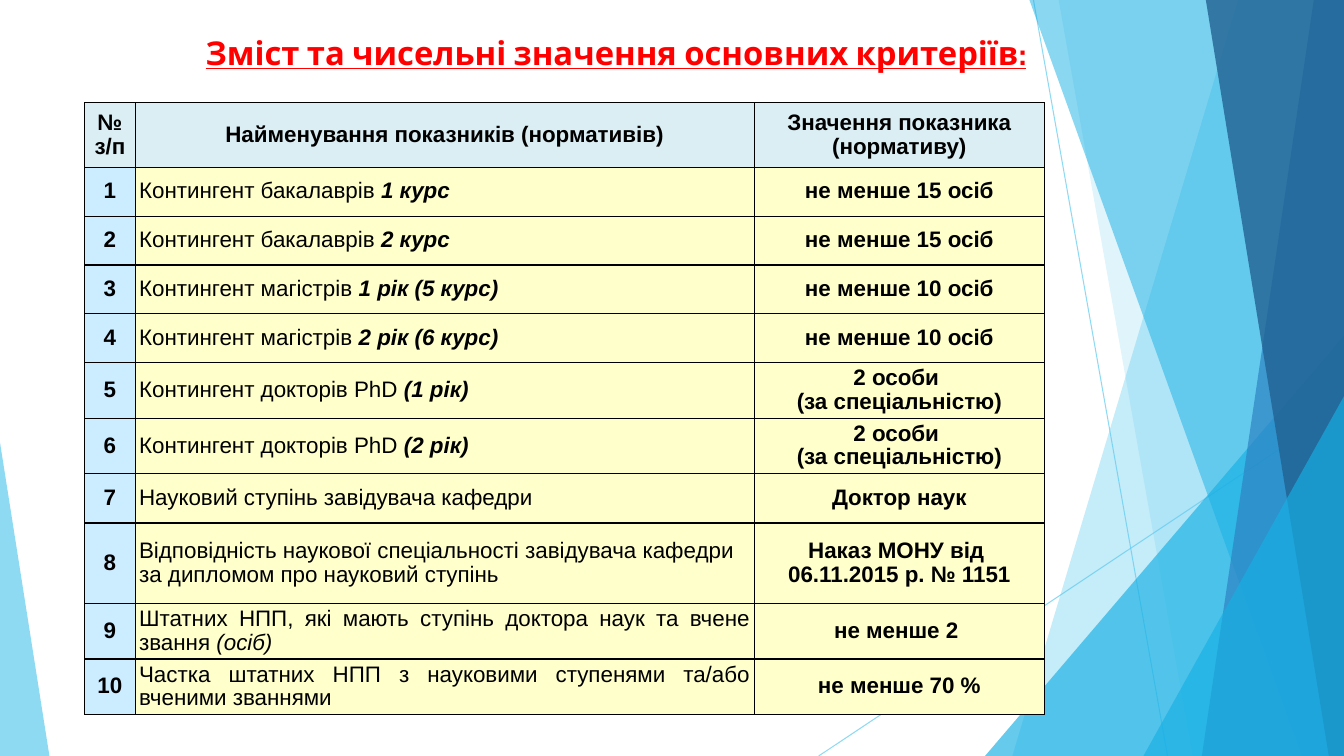
"""Builds the slide with the table of main criteria and their numeric values."""
import pptx
import pptx.dml.color
import pptx.enum.shapes
import pptx.enum.text
import pptx.oxml
import pptx.oxml.ns
import pptx.util

COLUMNS, ROWS = 1333, 750
UNIT = pptx.util.Inches(0.01)
NAMESPACE = pptx.oxml.ns.nsdecls("a")
ALIGN = pptx.enum.text.PP_ALIGN
MIDDLE = pptx.enum.text.MSO_ANCHOR.MIDDLE


def paint(fill, color, opacity=100):
    """Gives a fill a solid colour with an opacity in per cent."""
    fill.solid()
    fill.fore_color.rgb = pptx.dml.color.RGBColor.from_string(color)
    if opacity < 100:
        alpha = pptx.oxml.parse_xml(f'<a:alpha {NAMESPACE} val="{opacity * 1000}"/>')
        fill._xPr.find(".//" + pptx.oxml.ns.qn("a:srgbClr")).append(alpha)


presentation = pptx.Presentation()
presentation.slide_width = COLUMNS * UNIT
presentation.slide_height = ROWS * UNIT
slide = presentation.slides.add_slide(presentation.slide_layouts[5])

for start_x, start_y, end_x, end_y in [(1025, 0, 1158, ROWS), (COLUMNS, 403, 812, ROWS)]:
    connector = slide.shapes.add_connector(
        pptx.enum.shapes.MSO_CONNECTOR.STRAIGHT,
        start_x * UNIT, start_y * UNIT, end_x * UNIT, end_y * UNIT)
    connector.line.width = pptx.util.Pt(0.75)
    paint(connector.line.fill, "5FCBEF", 70)
    connector._element.spPr.append(pptx.oxml.parse_xml(f"<a:effectLst {NAMESPACE}/>"))

# A band gives its left edge at top and bottom; a triangle gives left, top, width and apex.
facets = [
    ("band", (1228, 1004), "5FCBEF", 36),
    ("band", (1050, 1183), "5FCBEF", 20),
    ("triangle", (977, 333, 356, 1), "17B0E4", 66),
    ("band", (1021, 1291), "17B0E4", 50),
    ("band", (1303, 1192), "2E83C3", 70),
    ("band", (1196, 1318), "226292", 80),
    ("triangle", (1134, 393, 199, 1), "17B0E4", 66),
    ("triangle", (0, 439, 49, 0), "5FCBEF", 70),
]
for kind, geometry, color, opacity in facets:
    if kind == "band":
        top_left, bottom_left = geometry
        builder = slide.shapes.build_freeform(top_left, 0, scale=UNIT)
        builder.add_line_segments([(COLUMNS, 0), (COLUMNS, ROWS), (bottom_left, ROWS)])
        facet = builder.convert_to_shape()
    else:
        left, top, width, apex = geometry
        facet = slide.shapes.add_shape(
            pptx.enum.shapes.MSO_SHAPE.ISOSCELES_TRIANGLE,
            left * UNIT, top * UNIT, width * UNIT, (ROWS - top) * UNIT)
        facet.adjustments[0] = apex
    facet.shadow.inherit = False
    facet.line.fill.background()
    paint(facet.fill, color, opacity)

title = slide.shapes.title
title.left, title.top, title.width, title.height = (n * UNIT for n in (194, 28, 945, 47))
title.text_frame.text = "Зміст та чисельні значення основних критеріїв:"
title.text_frame.vertical_anchor = MIDDLE
title.text_frame.paragraphs[0].alignment = ALIGN.LEFT
title_font = title.text_frame.paragraphs[0].runs[0].font
title_font.name, title_font.size = "Cabin", pptx.util.Pt(23.4)
title_font.bold = title_font.underline = True
paint(title_font.fill, "FF0000")

criteria = [
    ("Найменування показників (нормативів)", "", "Значення показника (нормативу)"),
    ("Контингент бакалаврів ", "1 курс", "не менше 15 осіб"),
    ("Контингент бакалаврів ", "2 курс", "не менше 15 осіб"),
    ("Контингент магістрів ", "1 рік (5 курс)", "не менше 10 осіб"),
    ("Контингент магістрів ", "2 рік (6 курс)", "не менше 10 осіб"),
    ("Контингент докторів PhD ", "(1 рік) ", "2 особи \n(за спеціальністю)"),
    ("Контингент докторів PhD ", "(2 рік) ", "2 особи \n(за спеціальністю)"),
    ("Науковий ступінь завідувача кафедри", "", "Доктор наук"),
    ("Відповідність наукової спеціальності завідувача кафедри\n"
     "за дипломом про науковий ступінь", "", "Наказ МОНУ від \n06.11.2015 р. № 1151"),
    ("Штатних НПП, які мають ступінь доктора наук та вчене звання ", "(осіб) ",
     "не менше 2 "),
    ("Частка штатних НПП з науковими ступенями та/або вченими званнями", "",
     "не менше 70 %"),
]
column_widths = [50, 614, 288]
row_heights = [64] + [48.5] * 4 + [55, 55, 49, 80, 55, 55]
table = slide.shapes.add_table(
    len(criteria), len(column_widths), 84 * UNIT, 102 * UNIT,
    sum(column_widths) * UNIT, int(sum(row_heights) * UNIT)).table
for column, width in zip(table.columns, column_widths):
    column.width = width * UNIT
for row, height in zip(table.rows, row_heights):
    row.height = int(height * UNIT)

for row_index, (name, emphasis, value) in enumerate(criteria):
    number = str(row_index) if row_index else "№\nз/п"
    for column_index, text in enumerate([number, name, value]):
        is_name = row_index > 0 and column_index == 1
        cell = table.cell(row_index, column_index)
        cell.vertical_anchor = MIDDLE
        cell.margin_left = cell.margin_right = 4 * UNIT
        cell.margin_top = cell.margin_bottom = 0
        for side in "LRTB":
            cell._tc.get_or_add_tcPr().append(pptx.oxml.parse_xml(
                f'<a:ln{side} {NAMESPACE} w="12700"><a:solidFill>'
                f'<a:srgbClr val="000000"/></a:solidFill></a:ln{side}>'))
        body_color = "FFFFCC" if column_index else "CCECFF"
        paint(cell.fill, body_color if row_index else "DAEEF3")
        cell.text_frame.text = text
        if is_name and emphasis:
            cell.text_frame.paragraphs[-1].add_run().text = emphasis
        for paragraph in cell.text_frame.paragraphs:
            paragraph.alignment = ALIGN.JUSTIFY if is_name else ALIGN.CENTER
            paragraph.line_spacing = 0.95
            for run in paragraph.runs:
                is_emphasis = is_name and run.text == emphasis
                run.font.name, run.font.size = "Arial", pptx.util.Pt(16)
                run.font.bold = not is_name or (is_emphasis and emphasis != "(осіб) ")
                run.font.italic = is_emphasis
                paint(run.font.fill, "000000")

presentation.save("out.pptx")
